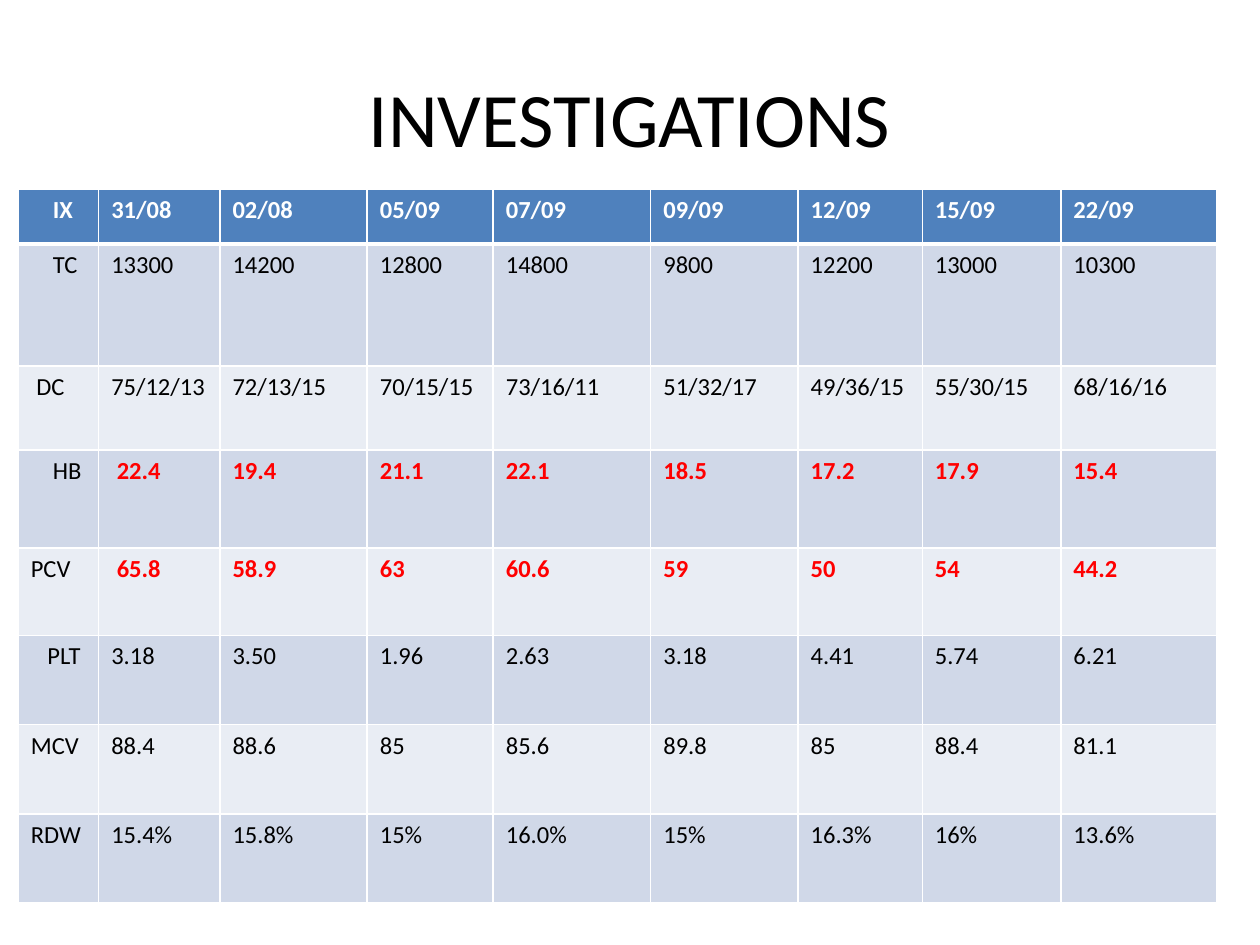
from dataclasses import dataclass

from lxml import etree
from pptx import Presentation
from pptx import util as u
from pptx.dml import color
from pptx.enum import text
from pptx.oxml import ns

Pt = u.Pt


@dataclass(frozen=True)
class Theme:
    font: str = "Calibri"
    title_size: float = 44
    cell_size: float = 14
    ink: str = "000000"
    white: str = "FFFFFF"
    alert: str = "FF0000"
    header: str = "4F81BD"
    bands: tuple = ("E9EDF4", "D0D8E8")


theme = Theme()


def add_span(para, words, size, ink, bold=False):
    span = para.add_run()
    span.text = words
    span.font.name = theme.font
    span.font.size = Pt(size)
    span.font.bold = bold
    span.font.color.rgb = color.RGBColor.from_string(ink)


def add_border(cell, position, side, width):
    line = etree.Element(ns.qn(f"a:ln{side}"), w=str(Pt(width)))
    fill = etree.SubElement(line, ns.qn("a:solidFill"))
    etree.SubElement(fill, ns.qn("a:srgbClr"), val=theme.white)
    cell._tc.get_or_add_tcPr().insert(position, line)


results = [
    ["IX", "31/08", "02/08", "05/09", "07/09", "09/09", "12/09", "15/09", "22/09"],
    ["TC", "13300", "14200", "12800", "14800", "9800", "12200", "13000", "10300"],
    ["DC", "75/12/13", "72/13/15", "70/15/15", "73/16/11", "51/32/17", "49/36/15", "55/30/15", "68/16/16"],
    ["HB", "22.4", "19.4", "21.1", "22.1", "18.5", "17.2", "17.9", "15.4"],
    ["PCV", "65.8", "58.9", "63", "60.6", "59", "50", "54", "44.2"],
    ["PLT", "3.18", "3.50", "1.96", "2.63", "3.18", "4.41", "5.74", "6.21"],
    ["MCV", "88.4", "88.6", "85", "85.6", "89.8", "85", "88.4", "81.1"],
    ["RDW", "15.4%", "15.8%", "15%", "16.0%", "15%", "16.3%", "16%", "13.6%"],
]
column_widths = [46, 69.3, 84.2, 72, 90, 84.2, 71, 79.2, 88.8]
row_heights = [31.5, 69.6, 48, 56, 50, 51, 51, 51]
cell_margin = 7.2
indents = {"IX": 12.6, "TC": 12.6, "DC": 3.2, "HB": 12.6, "PLT": 9.5, "22.4": 3.2, "65.8": 3.2}
alert_rows = ("HB", "PCV")

deck = Presentation()
deck.slide_width, deck.slide_height = Pt(720), Pt(540)
page = deck.slides.add_slide(deck.slide_layouts[5])

title = page.shapes.title
title.left, title.top, title.width, title.height = Pt(36), Pt(21.6), Pt(648), Pt(90)
title.text_frame.vertical_anchor = text.MSO_ANCHOR.MIDDLE
para = title.text_frame.paragraphs[0]
para.alignment = text.PP_ALIGN.CENTER
add_span(para, "INVESTIGATIONS", theme.title_size, theme.ink)

table = page.shapes.add_table(
    len(results), len(results[0]), Pt(10.4), Pt(108),
    Pt(sum(column_widths)), Pt(sum(row_heights)),
).table
for column, width in zip(table.columns, column_widths):
    column.width = Pt(width)
for row, height in zip(table.rows, row_heights):
    row.height = Pt(height)

for row_index, values in enumerate(results):
    is_header = row_index == 0
    band = theme.header if is_header else theme.bands[row_index % 2]
    top = 3 if row_index == 1 else 1
    bottom = 3 if is_header else 1
    for column_index, value in enumerate(values):
        is_alert = values[0] in alert_rows and column_index > 0
        ink = theme.white if is_header else theme.alert if is_alert else theme.ink
        cell = table.cell(row_index, column_index)
        cell.margin_left = Pt(cell_margin + indents.get(value, 0))
        cell.fill.solid()
        cell.fill.fore_color.rgb = color.RGBColor.from_string(band)
        borders = (("L", 1), ("R", 1), ("T", top), ("B", bottom))
        for position, (side, width) in enumerate(borders):
            add_border(cell, position, side, width)
        add_span(cell.text_frame.paragraphs[0], value, theme.cell_size, ink, is_header or is_alert)

deck.save("out.pptx")
